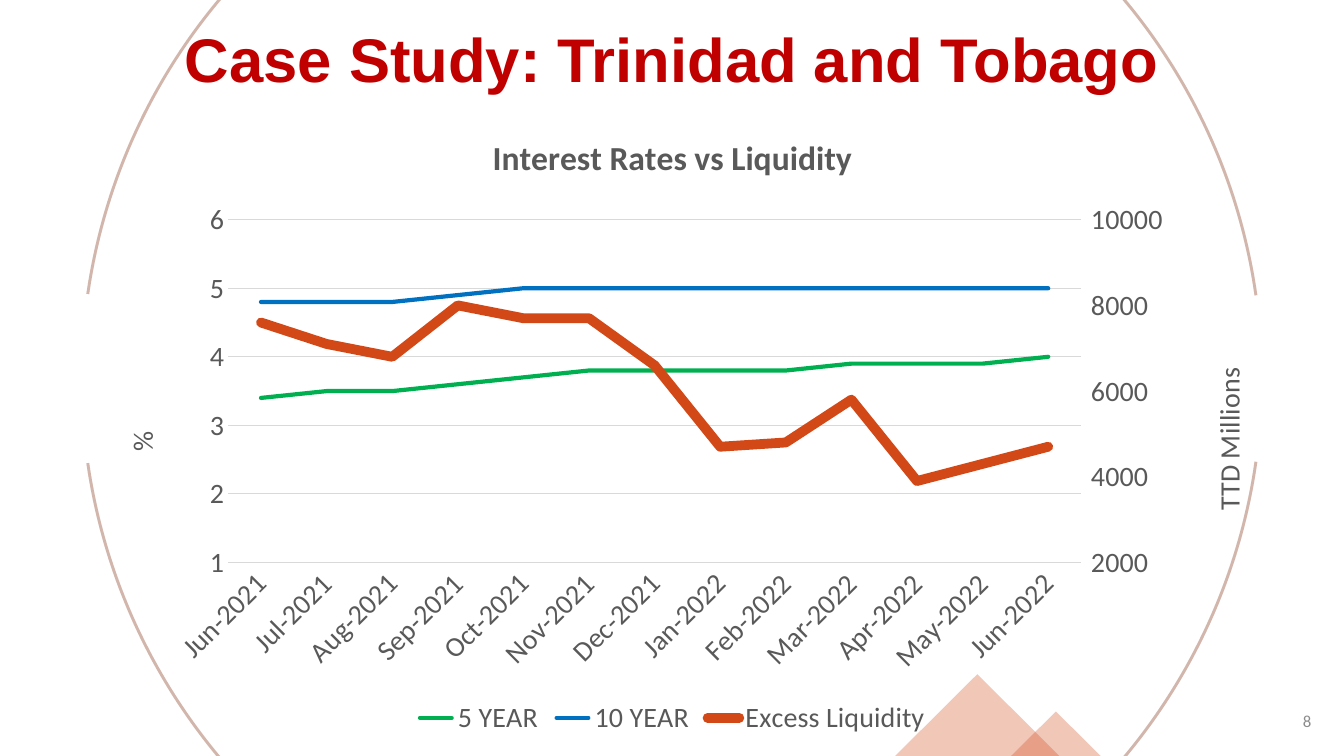
from copy import deepcopy

from pptx import Presentation
from pptx.chart.axis import ValueAxis
from pptx.chart.data import CategoryChartData
from pptx.dml.color import RGBColor
from pptx.enum.chart import XL_CHART_TYPE, XL_LEGEND_POSITION, XL_MARKER_STYLE, XL_TICK_MARK
from pptx.enum.shapes import MSO_SHAPE
from pptx.enum.text import MSO_ANCHOR, MSO_AUTO_SIZE, PP_ALIGN
from pptx.oxml import parse_xml
from pptx.oxml.ns import nsdecls, qn
from pptx.util import Cm, Pt

LINE = XL_CHART_TYPE.LINE
BOTTOM = XL_LEGEND_POSITION.BOTTOM
PLAIN = XL_MARKER_STYLE.NONE
NO_TICK, OUT_TICK = XL_TICK_MARK.NONE, XL_TICK_MARK.OUTSIDE
ARC, PEAK = MSO_SHAPE.ARC, MSO_SHAPE.ISOSCELES_TRIANGLE
TOP, MIDDLE = MSO_ANCHOR.TOP, MSO_ANCHOR.MIDDLE
CENTER, RIGHT = PP_ALIGN.CENTER, PP_ALIGN.RIGHT
NO_FIT = MSO_AUTO_SIZE.NONE

COLORS = {
    "title": "C00000", "text": "595959", "grid": "D9D9D9", "page": "8C8C8C",
    "ring": "C49F92", "orange": "D34817", "green": "00B050", "blue": "0070C0",
}
MONTHS = ["Jun-2021", "Jul-2021", "Aug-2021", "Sep-2021", "Oct-2021", "Nov-2021", "Dec-2021",
          "Jan-2022", "Feb-2022", "Mar-2022", "Apr-2022", "May-2022", "Jun-2022"]
# Name, colour, line width, values
SERIES = [
    ("5 YEAR", "green", 3, [3.4, 3.5, 3.5, 3.6, 3.7, 3.8, 3.8, 3.8, 3.8, 3.9, 3.9, 3.9, 4]),
    ("10 YEAR", "blue", 3, [4.8, 4.8, 4.8, 4.9, 5, 5, 5, 5, 5, 5, 5, 5, 5]),
    ("Excess Liquidity", "orange", 7,
     [7600, 7100, 6800, 8000, 7700, 7700, 6600, 4700, 4800, 5800, 3900, 4300, 4700]),
]


def rgb(name):
    return RGBColor.from_string(COLORS[name])


def style(font, size, color, bold=False, face="Calibri"):
    font.name, font.size, font.bold = face, Pt(size), bold
    font.color.rgb = rgb(color)


def write(frame, text, *look):
    para = frame.paragraphs[0]
    run = para.add_run()
    run.text = text
    style(run.font, *look)
    return para


def fade(fill, percent):
    """Set the opacity of a solid fill element."""
    color = fill.find(qn("a:srgbClr"))
    color.append(parse_xml(f'<a:alpha {nsdecls("a")} val="{percent * 1000}"/>'))


# Backdrop
def add_peak(slide, *box):
    peak = slide.shapes.add_shape(PEAK, *map(Cm, box))
    peak.shadow.inherit = False
    peak.fill.solid()
    peak.fill.fore_color.rgb = rgb("orange")
    fade(peak._element.spPr.find(qn("a:solidFill")), 30)
    peak.line.fill.background()


def add_arc(slide, flip):
    arc = slide.shapes.add_shape(ARC, Cm(2.06), Cm(-5.33), Cm(29.74), Cm(29.74))
    arc.shadow.inherit = False
    arc.adjustments[0] = 112.945
    arc.adjustments[1] = 211.132
    arc.fill.background()
    arc.line.width = Pt(2)
    arc.line.color.rgb = rgb("ring")
    props = arc._element.spPr
    fade(props.find(qn("a:ln")).find(qn("a:solidFill")), 50)
    if flip:
        props.find(qn("a:xfrm")).set("flipV", "1")


# Text
def set_title(slide, text):
    title = slide.shapes.title
    title.left, title.top, title.width, title.height = map(Cm, (2.34, 0.74, 29.21, 3.38))
    frame = title.text_frame
    frame.margin_left = frame.margin_right = frame.margin_top = frame.margin_bottom = 0
    frame.word_wrap, frame.auto_size = True, NO_FIT
    frame.vertical_anchor = TOP
    para = write(frame, text, 44, "title", True, "Arial")
    para.alignment, para.line_spacing = CENTER, 0.9
    slide.shapes._spTree.append(title._element)


def add_page(slide, text):
    frame = slide.shapes.add_textbox(*map(Cm, (25.68, 17.65, 7.62, 1.02))).text_frame
    frame.word_wrap = True
    frame.vertical_anchor = MIDDLE
    write(frame, text, 12, "page").alignment = RIGHT


# Chart
def place(parent, index, **spots):
    """Give a chart part a manual layout, in shares of the chart."""
    for old in parent.findall(qn("c:layout")):
        parent.remove(old)
    inner = '<c:layoutTarget val="inner"/>' if "w" in spots else ""
    modes = "".join(f'<c:{key}Mode val="edge"/>' for key in "xy")
    sizes = "".join(f'<c:{key} val="{val}"/>' for key, val in spots.items())
    parent.insert(index, parse_xml(
        f'<c:layout {nsdecls("c")}><c:manualLayout>{inner}{modes}{sizes}'
        "</c:manualLayout></c:layout>"))


def set_axis(axis, label, low, high, step, tick, x, y):
    axis.minimum_scale, axis.maximum_scale, axis.major_unit = low, high, step
    axis.major_tick_mark, axis.minor_tick_mark = tick, NO_TICK
    axis.format.line.fill.background()
    style(axis.tick_labels.font, 20, "text")
    axis.tick_labels.number_format = "General"
    axis.tick_labels.number_format_is_linked = False
    frame = axis.axis_title.text_frame
    write(frame, label, 20, "text")
    frame._txBody.find(qn("a:bodyPr")).set("rot", "-5400000")
    place(axis.axis_title._element, 1, x=x, y=y)


def split_axis(area):
    """Move the last series to a second pair of axes; return the value axis."""
    first, cat, val = (area.find(qn(f"c:{tag}")) for tag in ("lineChart", "catAx", "valAx"))
    second, cat2, val2 = map(deepcopy, (first, cat, val))
    for ser in second.findall(qn("c:ser"))[:-1]:
        second.remove(ser)
    first.remove(first.findall(qn("c:ser"))[-1])
    first.addnext(second)
    val.addnext(val2)
    val2.addnext(cat2)
    ids = ("50010", "50020")
    for node, key in zip(second.findall(qn("c:axId")), ids):
        node.set("val", key)
    for axis, own, other in ((cat2, *ids), (val2, *ids[::-1])):
        axis.find(qn("c:axId")).set("val", own)
        axis.find(qn("c:crossAx")).set("val", other)
    cat2.find(qn("c:delete")).set("val", "1")
    val2.find(qn("c:axPos")).set("val", "r")
    val2.find(qn("c:crosses")).set("val", "max")
    return ValueAxis(val2)


def add_rates(slide):
    data = CategoryChartData()
    data.categories = MONTHS
    for name, _, _, values in SERIES:
        data.add_series(name, values)
    box = map(Cm, (2.06, 2.79, 29.77, 15.88))
    chart = slide.shapes.add_chart(LINE, *box, data).chart
    style(chart.font, 20, "text")
    chart.has_title = True
    write(chart.chart_title.text_frame, "Interest Rates vs Liquidity", 24, "text", True)
    chart.has_legend = True
    chart.legend.position, chart.legend.include_in_layout = BOTTOM, False
    style(chart.legend.font, 20, "text")

    for ser, (_, color, width, _) in zip(chart.plots[0].series, SERIES):
        ser.smooth = False
        ser.marker.style = PLAIN
        ser.format.line.width = Pt(width)
        ser.format.line.color.rgb = rgb(color)
        ser.format.line._ln.set("cap", "rnd")

    months, rates = chart.category_axis, chart.value_axis
    months.major_tick_mark = NO_TICK
    style(months.tick_labels.font, 20, "text")
    months._element.find(qn("c:txPr")).find(qn("a:bodyPr")).set("rot", "-2700000")
    area = months._element.getparent()
    money = split_axis(area)
    money.has_major_gridlines = False
    for line in (months.format.line, rates.major_gridlines.format.line):
        line.width = Pt(0.75)
        line.color.rgb = rgb("grid")
    set_axis(rates, "%", 1, 6, 1, NO_TICK, 0.03, 0.5)
    set_axis(money, "TTD Millions", 2000, 10000, 2000, OUT_TICK, 0.95, 0.4)
    place(area, 0, x=0.124, y=0.173, w=0.722, h=0.544)


def main():
    deck = Presentation()
    deck.slide_width, deck.slide_height = Cm(33.87), Cm(19.05)
    slide = deck.slides.add_slide(deck.slide_layouts[5])
    add_peak(slide, 22.56, 16.99, 4.14, 2.06)
    add_peak(slide, 25.48, 17.93, 2.26, 1.12)
    for flip in (False, True) * 2:
        add_arc(slide, flip)
    add_page(slide, "8")
    set_title(slide, "Case Study: Trinidad and Tobago")
    add_rates(slide)
    deck.save("out.pptx")


if __name__ == "__main__":
    main()
